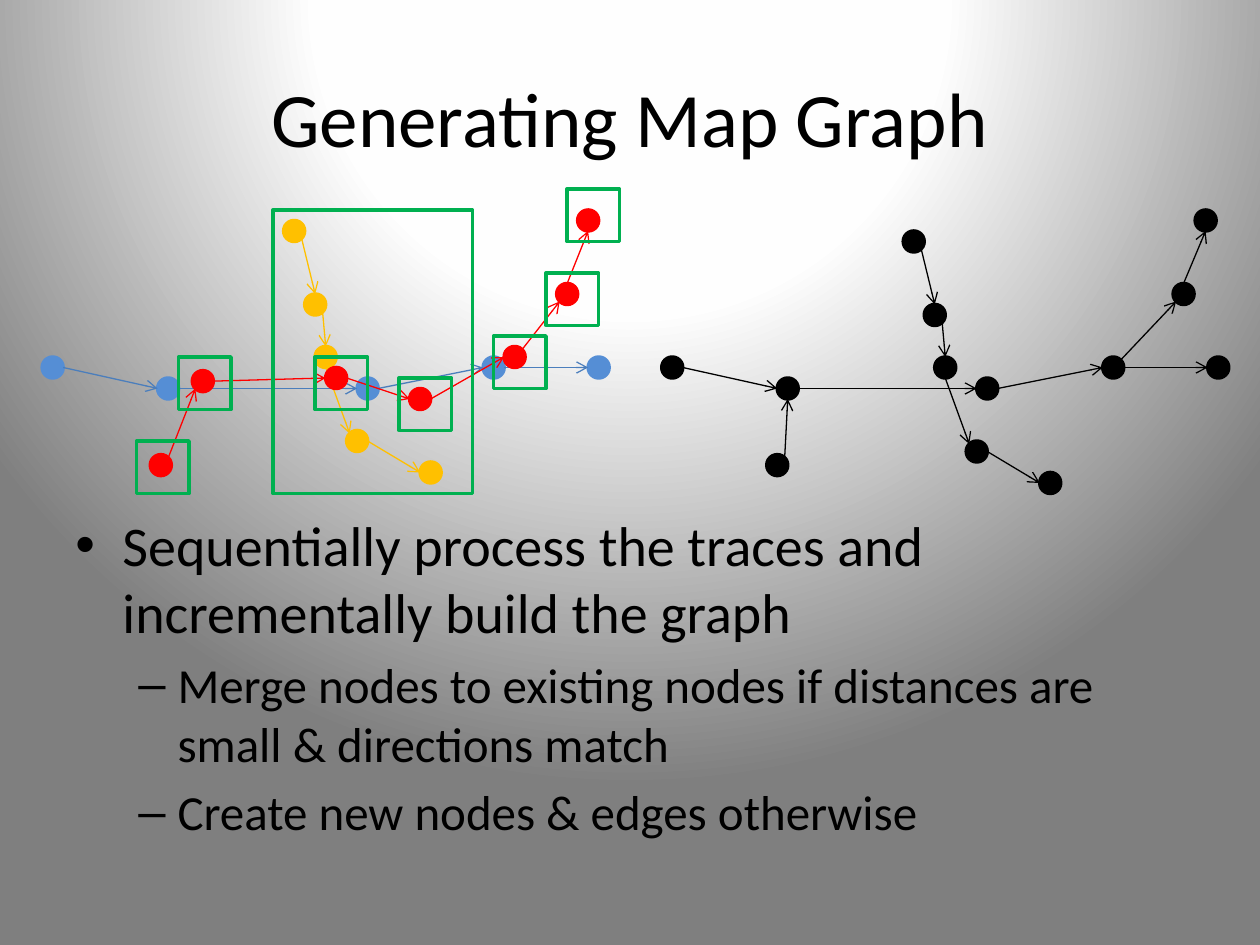
from lxml import etree
from pptx import Presentation
from pptx import util as u
from pptx.dml.color import RGBColor
from pptx.enum import shapes, text
from pptx.oxml import ns

BLUE = RGBColor(0x55, 0x8E, 0xD5)
BLUE_LINE = RGBColor(0x4B, 0x7E, 0xBC)
YELLOW = RGBColor(0xFF, 0xC0, 0x00)
RED = RGBColor(0xFF, 0x00, 0x00)
GREEN = RGBColor(0x00, 0xB0, 0x50)
BLACK = RGBColor(0x00, 0x00, 0x00)
BACKDROP = [(0, "FFFFFF"), (40, "FEFEFE"), (100, "7F7F7F")]

FONT = "Calibri"
STEP = 2.54 / 12
DIAG = 0.71
SITES = {"N": (0, -1), "S": (0, 1), "E": (1, 0), "W": (-1, 0),
         "NE": (DIAG, -DIAG), "NW": (-DIAG, -DIAG),
         "SE": (DIAG, DIAG), "SW": (-DIAG, DIAG)}

ROAD = [(1, 17), (12, 19), (31, 19), (43, 17), (53, 17)]
ROAD_JOINS = ["E W"] * 4
CROSSING = [(24, 4), (26, 11), (27, 16), (30, 24), (37, 27)]
CROSSING_JOINS = ["SE N", "SE N", "S NW", "E W"]
DETOUR = [(11.3, 26.3), (15.3, 18.3), (28, 18), (36, 20), (45, 16),
          (50, 10), (52, 3)]
DETOUR_JOINS = ["NE SW", "E W", "E W", "E W", "NE SW", "N S"]
EXIT = [(43, 17), (49.7, 10), (51.8, 3)]
EXIT_JOINS = ["NE SW", "N S"]
ENTRY = [(11, 26.3), (12, 19)]
ENTRY_JOINS = ["NE S"]
WINDOWS = [(9, 24), (13, 16), (26, 16), (34, 18), (43, 14), (48, 8), (50, 0)]

BULLETS = [
    (0, "Sequentially process the traces and incrementally build the graph"),
    (1, "Merge nodes to existing nodes if distances are small & directions match"),
    (1, "Create new nodes & edges otherwise"),
]
LEVELS = [(32, 0.95, 0.95, "•"), (28, 2.06, 0.79, "–")]


def at(origin, x, y):
    """Return the slide position of grid point x, y in a map."""
    return u.Cm(origin[0] + x * STEP), u.Cm(origin[1] + y * STEP)


def add_node(parent, origin, centre, color):
    """Draw one round node two steps wide."""
    x, y = centre
    side = u.Cm(2 * STEP)
    sp = parent.add_shape(shapes.MSO_SHAPE.OVAL, *at(origin, x - 1, y - 1), side, side)
    sp.shadow.inherit = False
    sp.fill.solid()
    sp.fill.fore_color.rgb = color
    sp.line.color.rgb = color
    sp.line.width = u.Pt(2)


def add_arrow(parent, origin, start, end, join, color):
    """Draw an arrow between the named rim sites of two nodes."""
    ends = []
    for (x, y), site in zip((start, end), join.split()):
        dx, dy = SITES[site]
        ends += at(origin, x + dx, y + dy)
    cx = parent.add_connector(shapes.MSO_CONNECTOR.STRAIGHT, *ends)
    cx.line.color.rgb = color
    cx.line.width = u.Pt(0.75)
    etree.SubElement(cx.line._get_or_add_ln(), ns.qn("a:tailEnd"), type="arrow")
    etree.SubElement(cx._element.spPr, ns.qn("a:effectLst"))


def add_trace(s, origin, nodes, joins, color, line=None, known=()):
    """Draw a trace as a group, leaving out nodes already known."""
    group = s.shapes.add_group_shape().shapes
    for node in nodes:
        if node not in known:
            add_node(group, origin, node, color)
    for start, end, join in zip(nodes, nodes[1:], joins):
        add_arrow(group, origin, start, end, join, line or color)


def add_window(s, origin, corner, width, height):
    """Draw a green search window."""
    sp = s.shapes.add_shape(shapes.MSO_SHAPE.RECTANGLE, *at(origin, *corner),
                            u.Cm(width * STEP), u.Cm(height * STEP))
    sp.shadow.inherit = False
    sp.fill.background()
    sp.line.color.rgb = GREEN
    sp.line.width = u.Pt(2)


def add_traces_map(s, origin):
    """Draw the recorded traces with their search windows."""
    add_trace(s, origin, ROAD, ROAD_JOINS, BLUE, BLUE_LINE)
    add_trace(s, origin, CROSSING, CROSSING_JOINS, YELLOW)
    add_trace(s, origin, DETOUR, DETOUR_JOINS, RED)
    for corner in WINDOWS:
        add_window(s, origin, corner, 5, 5)
    add_window(s, origin, (22, 2), 19, 27)


def add_merged_map(s, origin):
    """Draw the graph merged from the traces."""
    add_trace(s, origin, ROAD, ROAD_JOINS, BLACK)
    add_trace(s, origin, EXIT, EXIT_JOINS, BLACK, known=ROAD)
    add_trace(s, origin, ENTRY, ENTRY_JOINS, BLACK, known=ROAD)
    lowered = [(x, y + 1) for x, y in CROSSING]
    add_trace(s, origin, lowered, CROSSING_JOINS, BLACK)


def set_font(p, size):
    """Set the font of a paragraph."""
    p.font.name = FONT
    p.font.size = u.Pt(size)
    p.font.color.rgb = BLACK


def add_title(s, left, top, width, height):
    """Place and format the title placeholder."""
    sp = s.shapes.title
    sp.left, sp.top, sp.width, sp.height = map(u.Cm, (left, top, width, height))
    tf = sp.text_frame
    tf.text = "Generating Map Graph"
    tf.vertical_anchor = text.MSO_ANCHOR.MIDDLE
    p = tf.paragraphs[0]
    p.alignment = text.PP_ALIGN.CENTER
    set_font(p, 44)


def add_bullets(s, left, top, width, height):
    """Write the bulleted text on two levels."""
    tf = s.shapes.add_textbox(*map(u.Cm, (left, top, width, height))).text_frame
    tf.word_wrap = True
    for i, (level, words) in enumerate(BULLETS):
        size, margin, hang, mark = LEVELS[level]
        p = tf.add_paragraph() if i else tf.paragraphs[0]
        p.text = words
        p.level = level
        p.space_before = u.Pt(0.2 * size)
        set_font(p, size)
        pPr = p._p.get_or_add_pPr()
        pPr.set("marL", str(u.Cm(margin)))
        pPr.set("indent", str(-u.Cm(hang)))
        bullet_font = etree.Element(ns.qn("a:buFont"), typeface="Arial")
        bullet = etree.Element(ns.qn("a:buChar"), char=mark)
        pPr.find(ns.qn("a:defRPr")).addprevious(bullet_font)
        bullet_font.addnext(bullet)


def set_backdrop(s):
    """Fill the background with a circular gradient centred above the slide."""
    s.background.fill.gradient()
    grad = s._element.find(".//" + ns.qn("a:gradFill"))
    for child in list(grad):
        grad.remove(child)
    stops = etree.SubElement(grad, ns.qn("a:gsLst"))
    for percent, color in BACKDROP:
        stop = etree.SubElement(stops, ns.qn("a:gs"), pos=str(percent * 1000))
        etree.SubElement(stop, ns.qn("a:srgbClr"), val=color)
    circle = etree.SubElement(grad, ns.qn("a:path"), {"path": "circle"})
    etree.SubElement(circle, ns.qn("a:fillToRect"),
                     l="50000", t="-80000", r="50000", b="180000")


def main():
    """Build the slide and save it."""
    prs = Presentation()
    prs.slide_width, prs.slide_height = u.Cm(25.4), u.Cm(19.05)
    s = prs.slides.add_slide(prs.slide_layouts[5])
    set_backdrop(s)
    add_title(s, 1.27, 0.76, 22.86, 3.18)
    add_bullets(s, 1.27, 10.16, 22.86, 7.92)
    add_traces_map(s, (0.85, 3.81))
    add_merged_map(s, (13.34, 3.81))
    prs.save("out.pptx")


if __name__ == "__main__":
    main()
